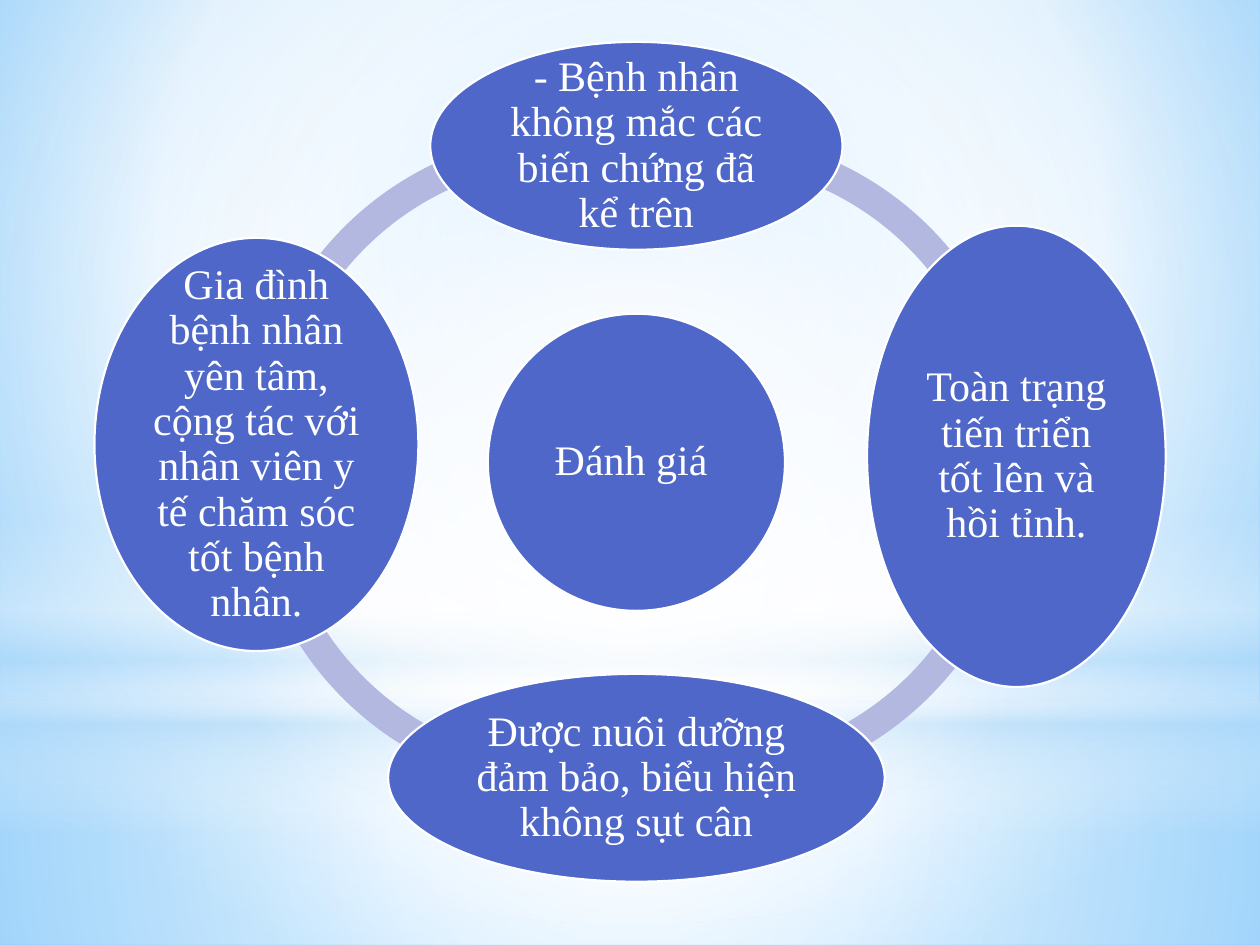
from lxml import etree
from pptx import Presentation
from pptx.dml.color import RGBColor
from pptx.enum import shapes, text
from pptx.oxml.ns import qn
from pptx.util import Cm, Pt

THEME = {
    "node": "4E67C8", "ring": "B2B8E0", "light": "FFFFFF",
    "font": "Times New Roman", "size": 24, "outline": 1.25, "inset": 0.08,
}
WIDTH, HEIGHT = 25.4, 19.05

# Gradient stops: position %, colour, opacity %
CENTRED = (50, 50, 50, 50)
SKY = {"stops": [(0, "9ED5FF", 100), (60, "FFFFFF", 100), (100, "5BB9FF", 100)],
       "focus": (20, 10, 20, 60)}
# Backdrop layers: shape, top, height, gradient
RECT, OVAL = shapes.MSO_SHAPE.RECTANGLE, shapes.MSO_SHAPE.OVAL
BACKDROP = [
    (RECT, 14.17, 4.88, {"stops": [(0, "FFFFFF", 91), (37, "FFFFFF", 76), (100, "B4DCFA", 79)],
                         "focus": CENTRED}),
    (RECT, 0, 14.17, {"stops": [(0, "FFFFFF", 89), (48, "FFFFFF", 62), (100, "B4DCFA", 79)],
                      "focus": CENTRED}),
    (RECT, 10.46, 6.35, {"stops": [(0, "FFFFFF", 0), (29, "FFFFFF", 30), (45, "B4DCFA", 40),
                                   (55, "FFFFFF", 26), (65, "B4DCFA", 60), (100, "FFFFFF", 0)],
                         "angle": 90}),
    (OVAL, 4.45, 14.17, {"stops": [(0, "FFFFFF", 100), (56, "FFFFFF", 0)], "focus": CENTRED}),
]

# Ring arcs: left, top, start and end angle in degrees
ARC_SIZE, ARC_THICKNESS = 13.03, 0.046
ARCS = [
    (5.03, 2.67, 181.96, 281.79),
    (5.00, 2.95, 78.08, 184.41),
    (7.62, 2.92, 357.63, 101.80),
    (7.62, 2.67, 258.25, 0.04),
]

# Nodes: text, centre x, centre y, width, height
AXIS = 12.83
NODES = [
    ("Đánh giá ", AXIS, 9.32, 5.99, 5.99),
    ("- Bệnh nhân không mắc các biến chứng đã kể trên", AXIS, 2.94, 8.31, 4.19),
    ("Toàn trạng tiến triển tốt lên và hồi tỉnh.", 20.49, 9.2, 6.02, 9.3),
    ("Được nuôi dưỡng đảm bảo, biểu hiện không sụt cân", AXIS, 15.68, 10.01, 4.19),
    ("Gia đình bệnh nhân yên tâm, cộng tác với nhân viên y tế chăm sóc tốt bệnh nhân.",
     5.17, 8.96, 6.53, 8.33),
]


def gradient_fill(stops, focus=None, angle=0):
    fill = etree.Element(qn("a:gradFill"), rotWithShape="1")
    stop_list = etree.SubElement(fill, qn("a:gsLst"))
    for position, colour, opacity in stops:
        stop = etree.SubElement(stop_list, qn("a:gs"), pos=str(position * 1000))
        rgb = etree.SubElement(stop, qn("a:srgbClr"), val=colour)
        if opacity < 100:
            etree.SubElement(rgb, qn("a:alpha"), val=str(opacity * 1000))
    if focus:
        radial = etree.SubElement(fill, qn("a:path"))
        radial.set("path", "circle")
        edges = {side: str(share * 1000) for side, share in zip("ltrb", focus)}
        etree.SubElement(radial, qn("a:fillToRect"), **edges)
    else:
        etree.SubElement(fill, qn("a:lin"), ang=str(angle * 60000), scaled="0")
    return fill


def swap_solid(properties, gradient):
    """Replace the solid fill of a properties element with a gradient."""
    properties.replace(properties.find(qn("a:solidFill")), gradient_fill(**gradient))


def add_plain(slide, kind, left, top, width, height, colour):
    """Add a shape with a solid fill, no shadow and no outline."""
    shape = slide.shapes.add_shape(kind, Cm(left), Cm(top), Cm(width), Cm(height))
    shape.shadow.inherit = False
    shape.fill.solid()
    shape.fill.fore_color.rgb = RGBColor.from_string(colour)
    shape.line.fill.background()
    return shape


def add_backdrop(slide):
    sky = slide.background.fill
    sky.solid()
    sky.fore_color.rgb = RGBColor.from_string(THEME["light"])
    swap_solid(slide.element.find(".//" + qn("p:bgPr")), SKY)
    for kind, top, height, gradient in BACKDROP:
        layer = add_plain(slide, kind, 0, top, WIDTH, height, THEME["light"])
        swap_solid(layer.element.spPr, gradient)


def add_ring(slide):
    for left, top, start, end in ARCS:
        arc = add_plain(slide, shapes.MSO_SHAPE.BLOCK_ARC, left, top,
                        ARC_SIZE, ARC_SIZE, THEME["ring"])
        # An adjustment unit is 100000 and a degree is 60000
        arc.adjustments[0] = start * 0.6
        arc.adjustments[1] = end * 0.6
        arc.adjustments[2] = ARC_THICKNESS


def add_node(slide, wording, x, y, width, height):
    node = add_plain(slide, OVAL, x - width / 2, y - height / 2, width, height, THEME["node"])
    light = RGBColor.from_string(THEME["light"])
    node.line.color.rgb = light
    node.line.width = Pt(THEME["outline"])

    frame = node.text_frame
    frame.word_wrap = True
    frame.vertical_anchor = text.MSO_ANCHOR.MIDDLE
    frame.margin_left = frame.margin_right = Cm(THEME["inset"])
    frame.margin_top = frame.margin_bottom = Cm(THEME["inset"])
    frame.text = wording
    paragraph = frame.paragraphs[0]
    paragraph.alignment = text.PP_ALIGN.CENTER
    paragraph.line_spacing = 0.9
    font = paragraph.runs[0].font
    font.name, font.size = THEME["font"], Pt(THEME["size"])
    font.color.rgb = light


def main():
    deck = Presentation()
    deck.slide_width, deck.slide_height = Cm(WIDTH), Cm(HEIGHT)
    slide = deck.slides.add_slide(deck.slide_layouts[6])
    add_backdrop(slide)
    add_ring(slide)
    for node in NODES:
        add_node(slide, *node)
    deck.save("out.pptx")


if __name__ == "__main__":
    main()
